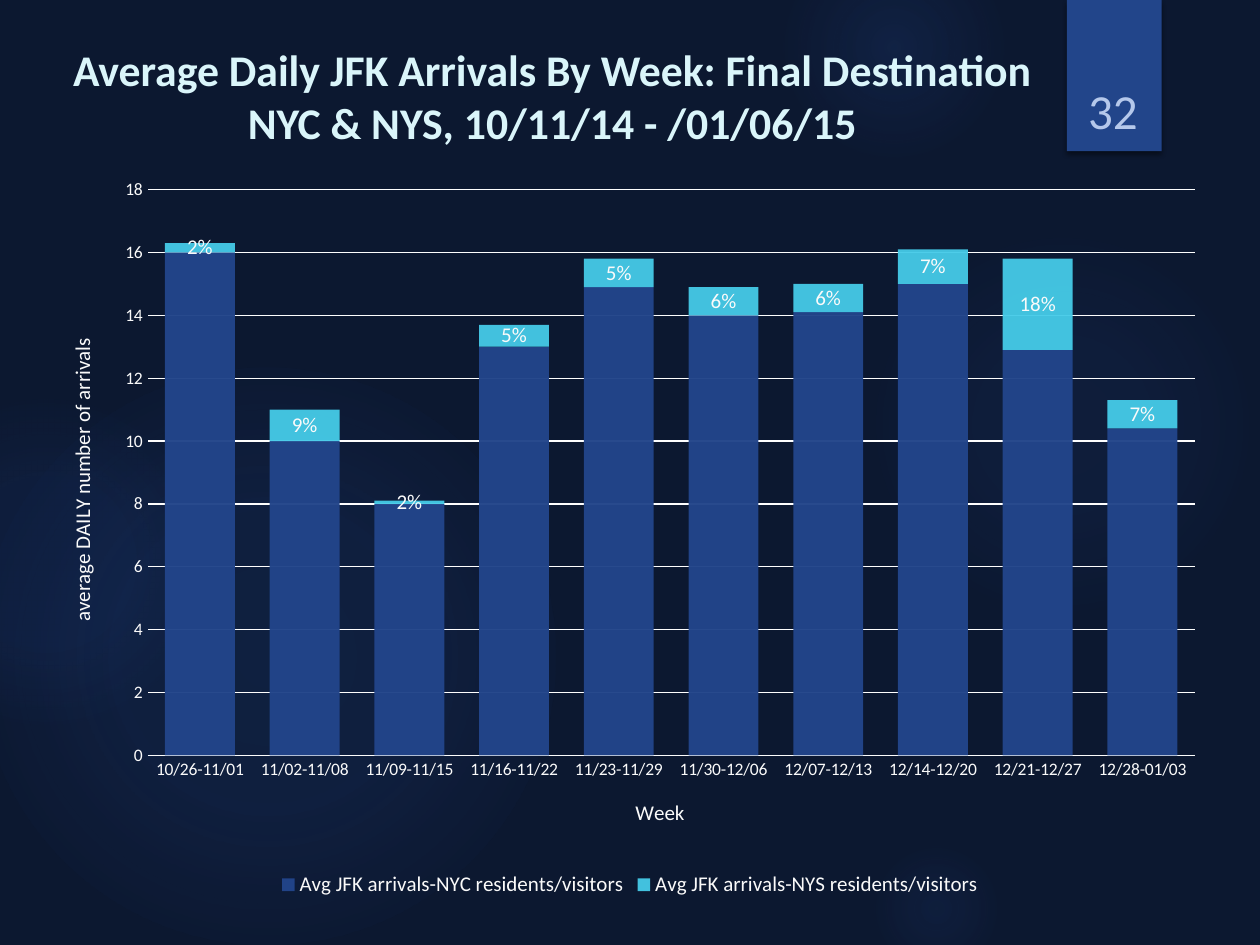
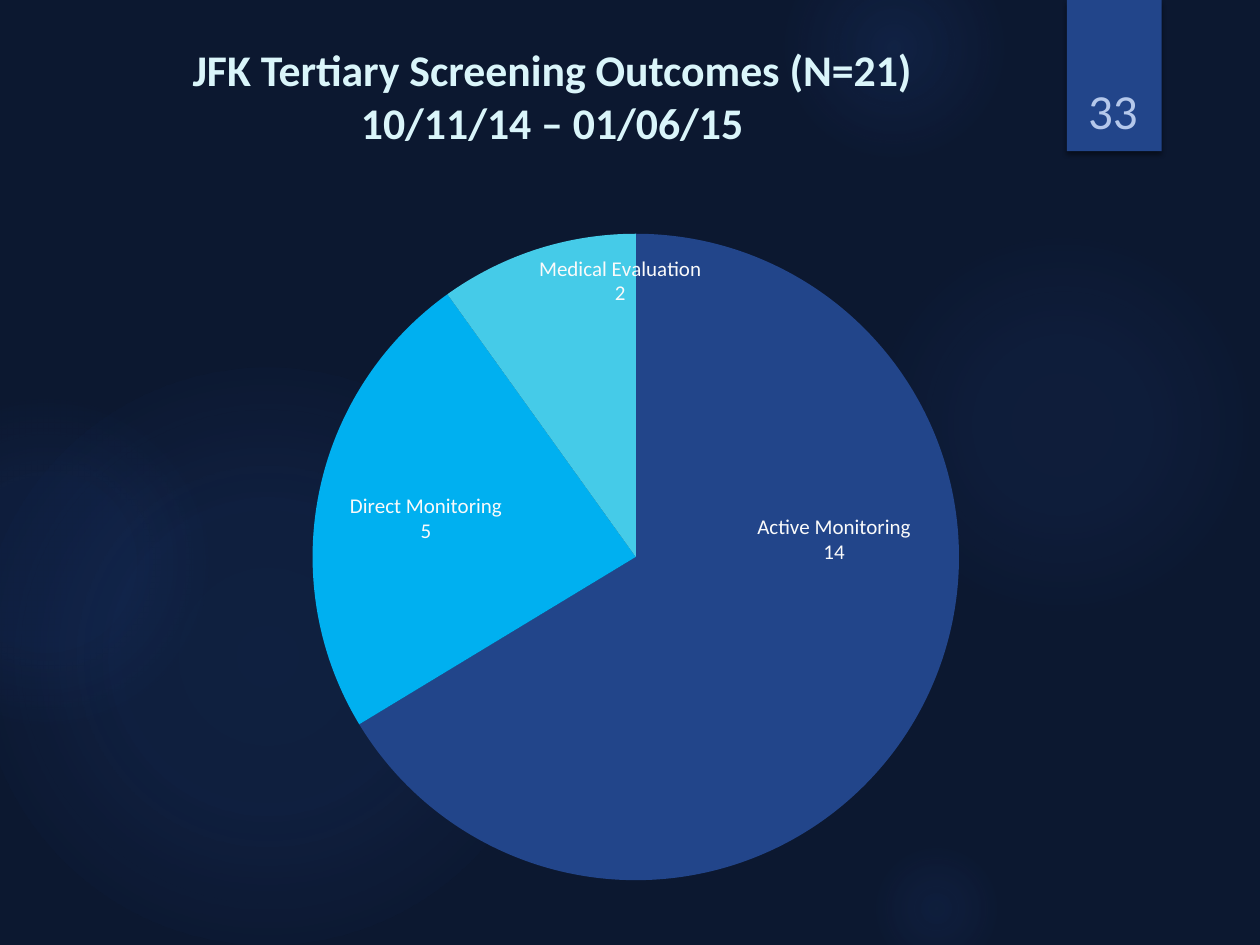
import dataclasses
import pptx
import pptx.util
import pptx.chart.data
import pptx.dml.color
import pptx.enum.chart
import pptx.enum.shapes
import pptx.enum.text
import pptx.oxml
import pptx.oxml.ns

Cm = pptx.util.Cm
Pt = pptx.util.Pt
Kind = pptx.enum.chart.XL_CHART_TYPE
Spot = pptx.enum.chart.XL_LABEL_POSITION
Shape = pptx.enum.shapes.MSO_SHAPE
Align = pptx.enum.text.PP_ALIGN
Anchor = pptx.enum.text.MSO_ANCHOR


@dataclasses.dataclass(frozen=True)
class Theme:
    font: str = "Calibri"
    back: str = "0C1830"
    glow: str = "3060C0"
    navy: str = "22458A"
    sky: str = "00B0F0"
    aqua: str = "45CBE8"
    title: str = "DAF5FA"
    page: str = "B5C8EB"
    text: str = "FAFAFA"
    line: str = "FDFDFD"
    grid: str = "FEFEFE"
    shade: str = "000000"
    head: int = 25
    num: int = 28
    label: int = 12
    tick: int = 10
    rule: float = 0.75


GLOWS = [
    (17.5, 4.65, 7.82, ((0, 7), (36, 6), (69, 0))),
    (15.8, -1.27, 4.45, ((0, 14), (36, 7), (73, 0))),
    (17.5, 16.94, 2.74, ((0, 9), (36, 5), (66, 0))),
    (-0.43, 7.42, 11.63, ((0, 11), (36, 10), (75, 0))),
    (-2.34, 8.05, 6.55, ((0, 8), (36, 8), (72, 0))),
]
BAND = (21.51, 0, 1.91, 3.05)
PAGE = (21.56, 0.81, 1.75, 2.13)
HEAD = (1.07, 0.74, 20.12, 2.44)
CHART = (0.84, 3.38, 23.72, 14.81)

WEEKS = ["10/26-11/01", "11/02-11/08", "11/09-11/15", "11/16-11/22", "11/23-11/29",
         "11/30-12/06", "12/07-12/13", "12/14-12/20", "12/21-12/27", "12/28-01/03"]
CITY = [16, 10, 8, 13, 14.9, 14, 14.1, 15, 12.9, 10.4]
STATE = [0.3, 1, 0.1, 0.7, 0.9, 0.9, 0.9, 1.1, 2.9, 0.9]
SHARES = ["2%", "9%", "2%", "5%", "5%", "6%", "6%", "7%", "18%", "7%"]
CASES = {"Active Monitoring": (67, 14), "Direct Monitoring": (24, 5),
         "Medical Evaluation": (10, 2)}


def color(code):
    return pptx.dml.color.RGBColor.from_string(code)


def node(tag, **attrs):
    item = pptx.oxml.parse_xml(f"<{tag} {pptx.oxml.ns.nsdecls(tag.split(':')[0])}/>")
    for key, value in attrs.items():
        item.set(key, str(value))
    return item


def add(parent, tag, **attrs):
    item = node(tag, **attrs)
    parent.append(item)
    return item


def tint(parent, code, alpha):
    item = add(parent, "a:srgbClr", val=code)
    add(item, "a:alpha", val=alpha * 1000)


def place(parent, index, **parts):
    for old in parent.findall(pptx.oxml.ns.qn("c:layout")):
        parent.remove(old)
    layout = node("c:layout")
    parent.insert(index, layout)
    manual = add(layout, "c:manualLayout")
    for key, value in parts.items():
        add(manual, f"c:{key}", val=value)


class Deck:
    def __init__(self, theme):
        self.theme = theme
        self.file = pptx.Presentation()
        self.file.slide_width = Cm(25.4)
        self.file.slide_height = Cm(19.05)
        self.slide = None

    def start(self):
        self.slide = self.file.slides.add_slide(self.file.slide_layouts[6])
        fill = self.slide.background.fill
        fill.solid()
        fill.fore_color.rgb = color(self.theme.back)
        for left, top, size, stops in GLOWS:
            self.glow(left, top, size, stops)
        self.band()

    def title(self, page, *lines):
        look = self.theme
        self.text(PAGE, [page], look.num, look.page, anchor=Anchor.BOTTOM)
        self.text(HEAD, lines, look.head, look.title, bold=True)

    def shape(self, kind, box):
        item = self.slide.shapes.add_shape(kind, *map(Cm, box))
        item.shadow.inherit = False
        item.line.fill.background()
        return item

    def glow(self, left, top, size, stops):
        item = self.shape(Shape.OVAL, (left, top, size, size))
        item.fill.background()
        props = item.element.spPr
        grad = node("a:gradFill", rotWithShape=1)
        props.replace(props.find(pptx.oxml.ns.qn("a:noFill")), grad)
        group = add(grad, "a:gsLst")
        for pos, alpha in stops:
            tint(add(group, "a:gs", pos=pos * 1000), self.theme.glow, alpha)
        ring = add(grad, "a:path", path="circle")
        add(ring, "a:fillToRect", l=50000, t=50000, r=50000, b=50000)

    def band(self):
        item = self.shape(Shape.RECTANGLE, BAND)
        item.fill.solid()
        item.fill.fore_color.rgb = color(self.theme.navy)
        effects = item.element.spPr.find(pptx.oxml.ns.qn("a:effectLst"))
        shade = add(effects, "a:outerShdw", blurRad=int(Pt(3)), dist=int(Pt(2)),
                    dir=5400000, rotWithShape=0)
        tint(shade, self.theme.shade, 45)

    def style(self, font, size, code=None, bold=False):
        font.name = self.theme.font
        font.size = Pt(size)
        font.bold = bold
        font.color.rgb = color(code or self.theme.text)

    def runs(self, frame, lines, size, code=None, bold=False):
        for index, line in enumerate(lines):
            para = frame.add_paragraph() if index else frame.paragraphs[0]
            para.alignment = Align.CENTER
            run = para.add_run()
            run.text = line
            self.style(run.font, size, code, bold)

    def text(self, box, lines, size, code, bold=False, anchor=Anchor.TOP):
        frame = self.slide.shapes.add_textbox(*map(Cm, box)).text_frame
        frame.word_wrap = True
        frame.vertical_anchor = anchor
        self.runs(frame, lines, size, code, bold)

    def chart(self, kind, cats, series, area):
        data = pptx.chart.data.CategoryChartData()
        data.categories = cats
        for name, values in series.items():
            data.add_series(name, values)
        chart = self.slide.shapes.add_chart(kind, *map(Cm, CHART), data).chart
        self.style(chart.font, self.theme.tick)
        chart.has_title = False
        chart.has_legend = False
        left, top, width, height = area
        place(chart.element.xpath(".//c:plotArea")[0], 0, layoutTarget="inner",
              xMode="edge", yMode="edge", x=left, y=top, w=width, h=height)
        return chart

    def paint(self, part, code):
        part.format.fill.solid()
        part.format.fill.fore_color.rgb = color(code)

    def labels(self, series, texts, spot):
        marks = series.data_labels
        marks.show_value = True
        marks.position = spot
        self.style(marks.font, self.theme.label)
        for index, lines in enumerate(texts):
            label = series.points[index].data_label
            self.runs(label.text_frame, lines, self.theme.label)
            label.position = spot

    def axis(self, axis, title):
        axis.has_title = True
        self.runs(axis.axis_title.text_frame, [title], self.theme.label)
        axis.major_tick_mark = pptx.enum.chart.XL_TICK_MARK.NONE
        axis.minor_tick_mark = pptx.enum.chart.XL_TICK_MARK.NONE
        self.style(axis.tick_labels.font, self.theme.tick)

    def rule(self, line, code):
        line.color.rgb = color(code)
        line.width = Pt(self.theme.rule)

    def bars(self):
        look = self.theme
        chart = self.chart(Kind.COLUMN_STACKED, WEEKS, {
            "Avg JFK arrivals-NYC residents/visitors": CITY,
            "Avg JFK arrivals-NYS residents/visitors": STATE,
        }, (0.09, 0.03, 0.89, 0.77))
        plot = chart.plots[0]
        plot.gap_width = 50
        plot.overlap = 100
        plot.vary_by_categories = False
        for series, code in zip(plot.series, (look.navy, look.aqua)):
            self.paint(series, code)
        fills = chart.element.xpath(".//c:ser/c:spPr/a:solidFill/a:srgbClr")
        for fill, alpha in zip(fills, (97, 95)):
            add(fill, "a:alpha", val=alpha * 1000)
        self.labels(plot.series[1], [[share] for share in SHARES], Spot.CENTER)

        weeks, count = chart.category_axis, chart.value_axis
        self.axis(weeks, "Week")
        self.axis(count, "average DAILY number of arrivals")
        self.rule(weeks.format.line, look.line)
        count.format.line.fill.background()
        self.rule(count.major_gridlines.format.line, look.grid)
        count.minimum_scale, count.maximum_scale, count.major_unit = 0, 18, 2
        count.tick_labels.number_format = "0"
        count.tick_labels.number_format_is_linked = False
        body = chart.element.xpath(".//c:valAx/c:title//a:bodyPr")[0]
        body.set("rot", "-5400000")
        body.set("vert", "horz")

        chart.has_legend = True
        chart.legend.position = pptx.enum.chart.XL_LEGEND_POSITION.BOTTOM
        chart.legend.include_in_layout = False
        self.style(chart.legend.font, look.label)

    def pie(self):
        look = self.theme
        values = [share for share, count in CASES.values()]
        chart = self.chart(Kind.PIE, list(CASES), {"Series 1": values},
                           (0.23, 0.09, 0.55, 0.88))
        series = chart.plots[0].series[0]
        for index, code in enumerate((look.navy, look.sky, look.aqua)):
            self.paint(series.points[index], code)
        texts = [[name, str(count)] for name, (share, count) in CASES.items()]
        self.labels(series, texts, Spot.INSIDE_END)
        shifts = ((0, -0.2), (0.02, 0))
        for label, (right, down) in zip(chart.element.xpath(".//c:dLbl"), shifts):
            place(label, 1, x=right, y=down)


def main():
    deck = Deck(Theme())
    deck.start()
    deck.bars()
    deck.title("32", "Average Daily JFK Arrivals By Week: Final Destination "
                     "NYC & NYS, 10/11/14 - /01/06/15")
    deck.start()
    deck.pie()
    deck.title("33", "JFK Tertiary Screening Outcomes (N=21)", "10/11/14 – 01/06/15")
    deck.file.save("out.pptx")


if __name__ == "__main__":
    main()
